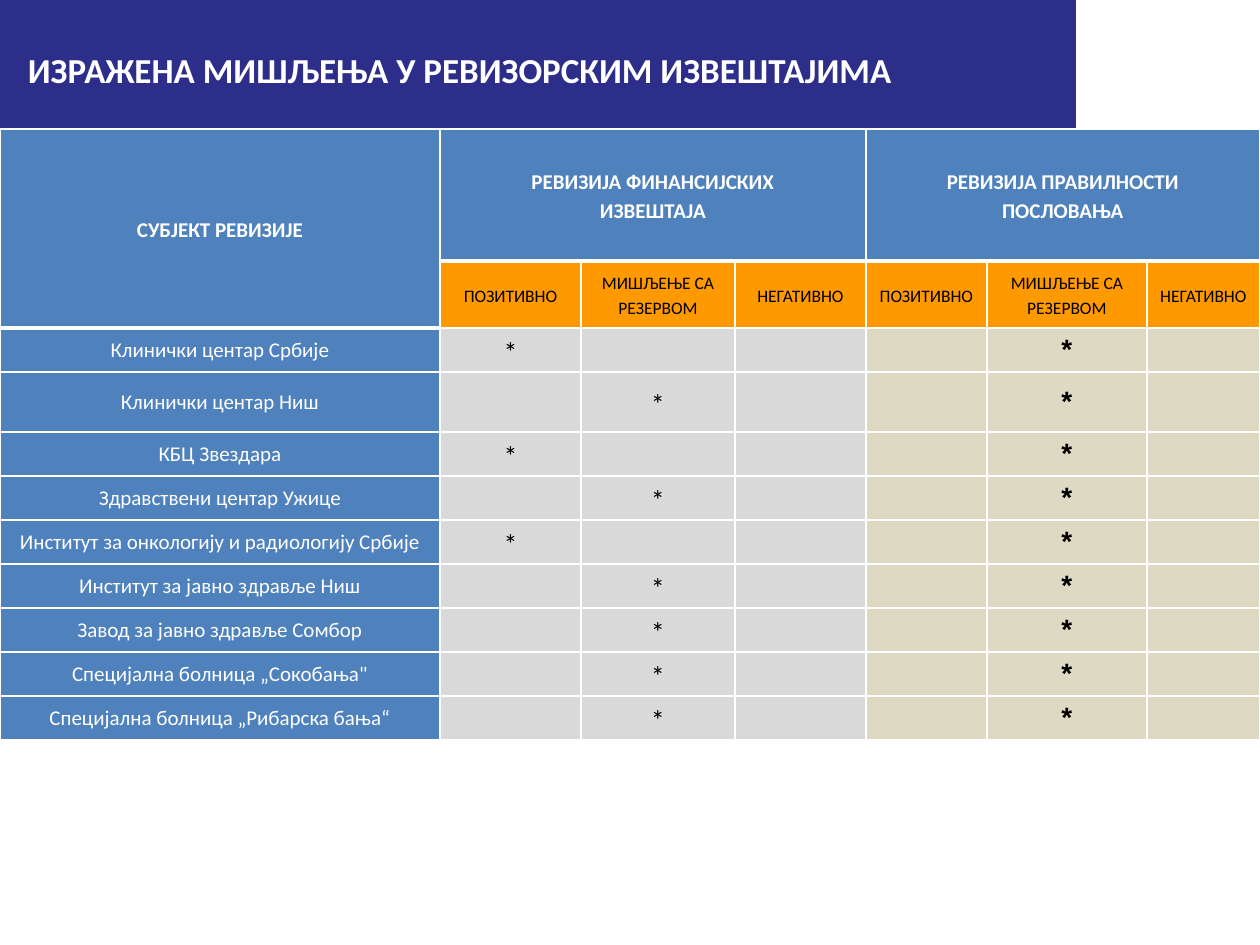
from lxml import etree
from pptx import Presentation
from pptx.dml.color import RGBColor
from pptx.enum.shapes import MSO_SHAPE
from pptx.enum.text import MSO_ANCHOR, PP_ALIGN
from pptx.oxml.ns import qn
from pptx.util import Pt

EMU_PER_PX = 7257.6  # 126 px to the inch
RECTANGLE = MSO_SHAPE.RECTANGLE
MIDDLE = MSO_ANCHOR.MIDDLE
LEFT, CENTER = PP_ALIGN.LEFT, PP_ALIGN.CENTER

WHITE = RGBColor(0xFF, 0xFF, 0xFF)
BLACK = RGBColor(0x00, 0x00, 0x00)
NAVY = RGBColor(0x2D, 0x2D, 0x8A)
BLUE = RGBColor(0x4F, 0x81, 0xBD)
ORANGE = RGBColor(0xFF, 0x99, 0x00)
GREY = RGBColor(0xD9, 0xD9, 0xD9)
BEIGE = RGBColor(0xDD, 0xD9, 0xC3)

TITLE = "ИЗРАЖЕНА МИШЉЕЊА У РЕВИЗОРСКИМ ИЗВЕШТАЈИМА"
SUBJECT_HEADER = "СУБЈЕКТ РЕВИЗИЈЕ"
AUDITS = ["РЕВИЗИЈА ФИНАНСИЈСКИХ\nИЗВЕШТАЈА", "РЕВИЗИЈА ПРАВИЛНОСТИ\nПОСЛОВАЊА"]
OPINIONS = ["ПОЗИТИВНО", "МИШЉЕЊЕ СА РЕЗЕРВОМ", "НЕГАТИВНО"]
POSITIVE, QUALIFIED = 1, 2  # columns of the financial audit
REGULARITY_QUALIFIED = 5
SUBJECTS = [
    ("Клинички центар Србије", POSITIVE),
    ("Клинички центар Ниш", QUALIFIED),
    ("КБЦ Звездара", POSITIVE),
    ("Здравствени центар Ужице", QUALIFIED),
    ("Институт за онкологију и радиологију Србије", POSITIVE),
    ("Институт за јавно здравље Ниш", QUALIFIED),
    ("Завод за јавно здравље Сомбор", QUALIFIED),
    ('Специјална болница „Сокобања"', QUALIFIED),
    ("Специјална болница „Рибарска бања“", QUALIFIED),
]
COLUMN_WIDTHS = [440, 141, 154, 131, 121, 160, 113]
ROW_HEIGHTS = [132, 67, 44, 60] + [44] * 7


def px(length):
    return round(length * EMU_PER_PX)


def write(frame, text, size, color, bold=False, font="Calibri", align=CENTER, spacing=None):
    frame.text = text
    for paragraph in frame.paragraphs:
        paragraph.alignment = align
        paragraph.line_spacing = spacing
        paragraph.font.name = font
        paragraph.font.size = Pt(size)
        paragraph.font.bold = bold
        paragraph.font.color.rgb = color


def add_title(slide):
    banner = slide.shapes.add_shape(RECTANGLE, 0, 0, px(1076), px(128))
    banner.shadow.inherit = False
    banner.fill.solid()
    banner.fill.fore_color.rgb = NAVY
    banner.line.fill.background()
    frame = banner.text_frame
    frame.word_wrap = True
    frame.vertical_anchor = MIDDLE
    frame.margin_left = px(28)
    frame.margin_top, frame.margin_bottom = px(12), 0
    write(frame, TITLE, 20, WHITE, bold=True, align=LEFT)


def set_borders(cell, top, bottom):
    """Draw white borders, with the top and bottom widths in points."""
    properties = cell._tc.get_or_add_tcPr()
    for side, width in (("L", 1), ("R", 1), ("T", top), ("B", bottom)):
        line = etree.SubElement(properties, qn(f"a:ln{side}"), w=str(Pt(width)))
        fill = etree.SubElement(line, qn("a:solidFill"))
        etree.SubElement(fill, qn("a:srgbClr"), val=str(WHITE))


def cell_color(row, column):
    if column == 0 or row == 0:
        return BLUE
    if row == 1:
        return ORANGE
    return GREY if column <= 3 else BEIGE


def format_cell(cell, row, column):
    last_header_row = 1 if column == 0 else 0
    set_borders(
        cell,
        top=3 if row == last_header_row + 1 else 1,
        bottom=3 if row == last_header_row else 1,
    )
    cell.fill.solid()
    cell.fill.fore_color.rgb = cell_color(row, column)
    cell.vertical_anchor = MIDDLE
    cell.margin_left = cell.margin_right = px(8)
    cell.margin_top = cell.margin_bottom = 0


def add_opinion_table(slide):
    frame = slide.shapes.add_table(
        len(ROW_HEIGHTS), len(COLUMN_WIDTHS), 0, px(129),
        px(sum(COLUMN_WIDTHS)), px(sum(ROW_HEIGHTS)),
    )
    table = frame.table
    table.first_row = table.horz_banding = False
    for column, width in zip(table.columns, COLUMN_WIDTHS):
        column.width = px(width)
    for row, height in zip(table.rows, ROW_HEIGHTS):
        row.height = px(height)
    for row in range(len(ROW_HEIGHTS)):
        for column in range(len(COLUMN_WIDTHS)):
            format_cell(table.cell(row, column), row, column)
    return table


def fill_headers(table):
    subject = table.cell(0, 0)
    subject.merge(table.cell(1, 0))
    write(subject.text_frame, SUBJECT_HEADER, 12, WHITE, bold=True, spacing=1.15)
    for index, audit in enumerate(AUDITS):
        first = 1 + index * len(OPINIONS)
        header = table.cell(0, first)
        header.merge(table.cell(0, first + len(OPINIONS) - 1))
        write(header.text_frame, audit, 12, WHITE, bold=True, spacing=1.15)
        for column, opinion in enumerate(OPINIONS, first):
            write(table.cell(1, column).text_frame, opinion, 10, BLACK, spacing=1.15)


def fill_subjects(table):
    for row, (subject, financial_column) in enumerate(SUBJECTS, 2):
        write(table.cell(row, 0).text_frame, subject, 12, WHITE)
        write(table.cell(row, financial_column).text_frame, "*", 16, BLACK, spacing=1.15)
        write(table.cell(row, REGULARITY_QUALIFIED).text_frame, "*", 16, BLACK,
              bold=True, font="Arial")


def main():
    presentation = Presentation()
    presentation.slide_width, presentation.slide_height = px(1260), px(945)
    slide = presentation.slides.add_slide(presentation.slide_layouts[6])
    add_title(slide)
    table = add_opinion_table(slide)
    fill_headers(table)
    fill_subjects(table)
    presentation.save("out.pptx")


if __name__ == "__main__":
    main()
